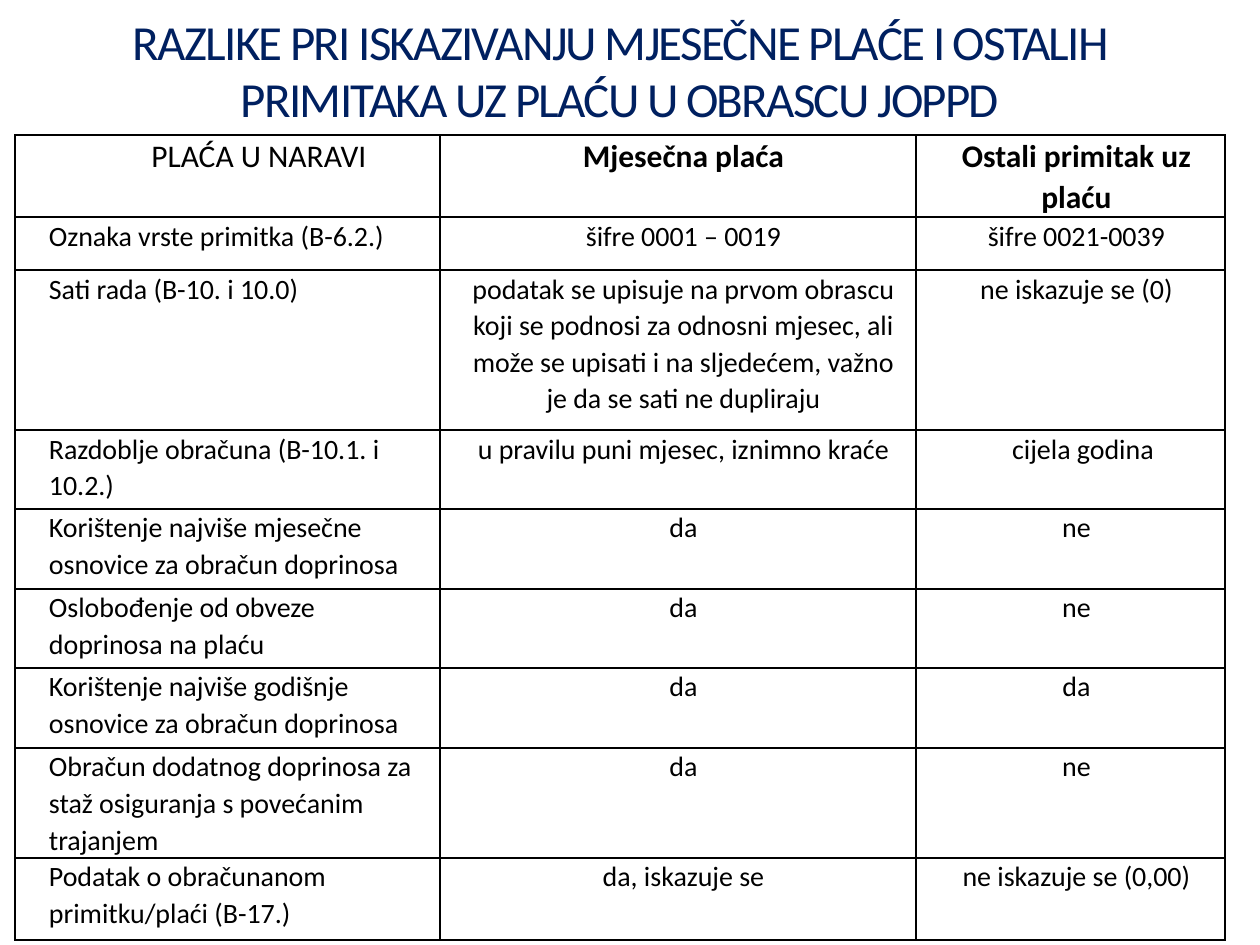
from dataclasses import dataclass

from lxml.etree import SubElement
from pptx import Presentation
from pptx.dml.color import RGBColor
from pptx.enum.text import MSO_ANCHOR as Anchor, PP_ALIGN as Align
from pptx.oxml.ns import qn
from pptx.util import Emu, Pt

EMU_PER_PX = 914400 / 126
FONT = "Calibri"
NAVY = RGBColor(0x00, 0x20, 0x60)
BLACK = RGBColor(0x00, 0x00, 0x00)

TITLE = "RAZLIKE PRI ISKAZIVANJU MJESEČNE PLAĆE I OSTALIH PRIMITAKA UZ PLAĆU U OBRASCU JOPPD"
COLUMN_WIDTHS = (425, 476, 309)
CELL_INSET = 9


@dataclass(frozen=True)
class Entry:
    text: str
    indent: int
    align: Align = Align.CENTER
    size: int = 16
    bold: bool = False


@dataclass(frozen=True)
class Row:
    height: int
    entries: tuple[Entry, Entry, Entry]


def data_row(height: int, label: str, monthly: str, other: str, other_indent: int = 12) -> Row:
    return Row(height, (Entry(label, 25, Align.LEFT), Entry(monthly, 11), Entry(other, other_indent)))


ROWS = (
    Row(82, (
        Entry("PLAĆA U NARAVI", 63, size=18),
        Entry("Mjesečna plaća", 11, size=18, bold=True),
        Entry("Ostali primitak uz plaću", 12, size=18, bold=True),
    )),
    data_row(53, "Oznaka vrste primitka (B-6.2.)", "šifre 0001 – 0019", "šifre 0021-0039"),
    data_row(160, "Sati rada (B-10. i 10.0)",
             "podatak se upisuje na prvom obrascu koji se podnosi za odnosni mjesec, "
             "ali može se upisati i na sljedećem, važno je da se sati ne dupliraju",
             "ne iskazuje se (0)"),
    data_row(79, "Razdoblje obračuna (B-10.1. i 10.2.)",
             "u pravilu puni mjesec, iznimno kraće", "cijela godina", 25),
    data_row(80, "Korištenje najviše mjesečne osnovice za obračun doprinosa", "da", "ne"),
    data_row(79, "Oslobođenje od obveze doprinosa na plaću", "da", "ne"),
    data_row(80, "Korištenje najviše godišnje osnovice za obračun doprinosa", "da", "da"),
    data_row(110, "Obračun dodatnog doprinosa za staž osiguranja s povećanim trajanjem", "da", "ne"),
    data_row(82, "Podatak o obračunanom primitku/plaći (B-17.)",
             "da, iskazuje se", "ne iskazuje se (0,00)"),
)


def px(length: float) -> Emu:
    return Emu(round(length * EMU_PER_PX))


def add_run(paragraph, text: str, size: int, color: RGBColor, bold: bool = False):
    run = paragraph.add_run()
    run.text = text
    run.font.name = FONT
    run.font.size = Pt(size)
    run.font.bold = bold
    run.font.color.rgb = color
    return run


def add_borders(cell) -> None:
    properties = cell._tc.get_or_add_tcPr()
    for index, side in enumerate(("lnL", "lnR", "lnT", "lnB")):
        line = properties.makeelement(qn(f"a:{side}"), {"w": str(Pt(1))})
        fill = SubElement(line, qn("a:solidFill"))
        SubElement(fill, qn("a:srgbClr"), val=str(BLACK))
        properties.insert(index, line)


def add_title(slide) -> None:
    title = slide.shapes.add_textbox(px(53), px(4), px(1134), px(135))
    frame = title.text_frame
    frame.word_wrap = True
    frame.vertical_anchor = Anchor.MIDDLE
    paragraph = frame.paragraphs[0]
    paragraph.alignment = Align.CENTER
    paragraph.line_spacing = 0.97
    run = add_run(paragraph, TITLE, 28, NAVY)
    # Letter spacing of -1 pt
    run.font._element.set("spc", "-100")


def fill_cell(cell, entry: Entry) -> None:
    cell.margin_left = px(CELL_INSET + entry.indent)
    cell.margin_right = px(CELL_INSET)
    cell.margin_top = cell.margin_bottom = 0
    cell.fill.background()
    add_borders(cell)
    paragraph = cell.text_frame.paragraphs[0]
    paragraph.alignment = entry.align
    paragraph.line_spacing = 1.07
    add_run(paragraph, entry.text, entry.size, BLACK, entry.bold)


def add_comparison_table(slide) -> None:
    frame = slide.shapes.add_table(
        len(ROWS), len(COLUMN_WIDTHS), px(15), px(135),
        px(sum(COLUMN_WIDTHS)), px(sum(row.height for row in ROWS)))
    table = frame.table
    table.first_row = table.horz_banding = False
    for column, width in zip(table.columns, COLUMN_WIDTHS):
        column.width = px(width)
    for table_row, row in zip(table.rows, ROWS):
        table_row.height = px(row.height)
        for cell, entry in zip(table_row.cells, row.entries):
            fill_cell(cell, entry)


def main() -> None:
    presentation = Presentation()
    presentation.slide_width, presentation.slide_height = px(1260), px(945)
    slide = presentation.slides.add_slide(presentation.slide_layouts[6])
    add_title(slide)
    add_comparison_table(slide)
    presentation.save("out.pptx")


if __name__ == "__main__":
    main()
